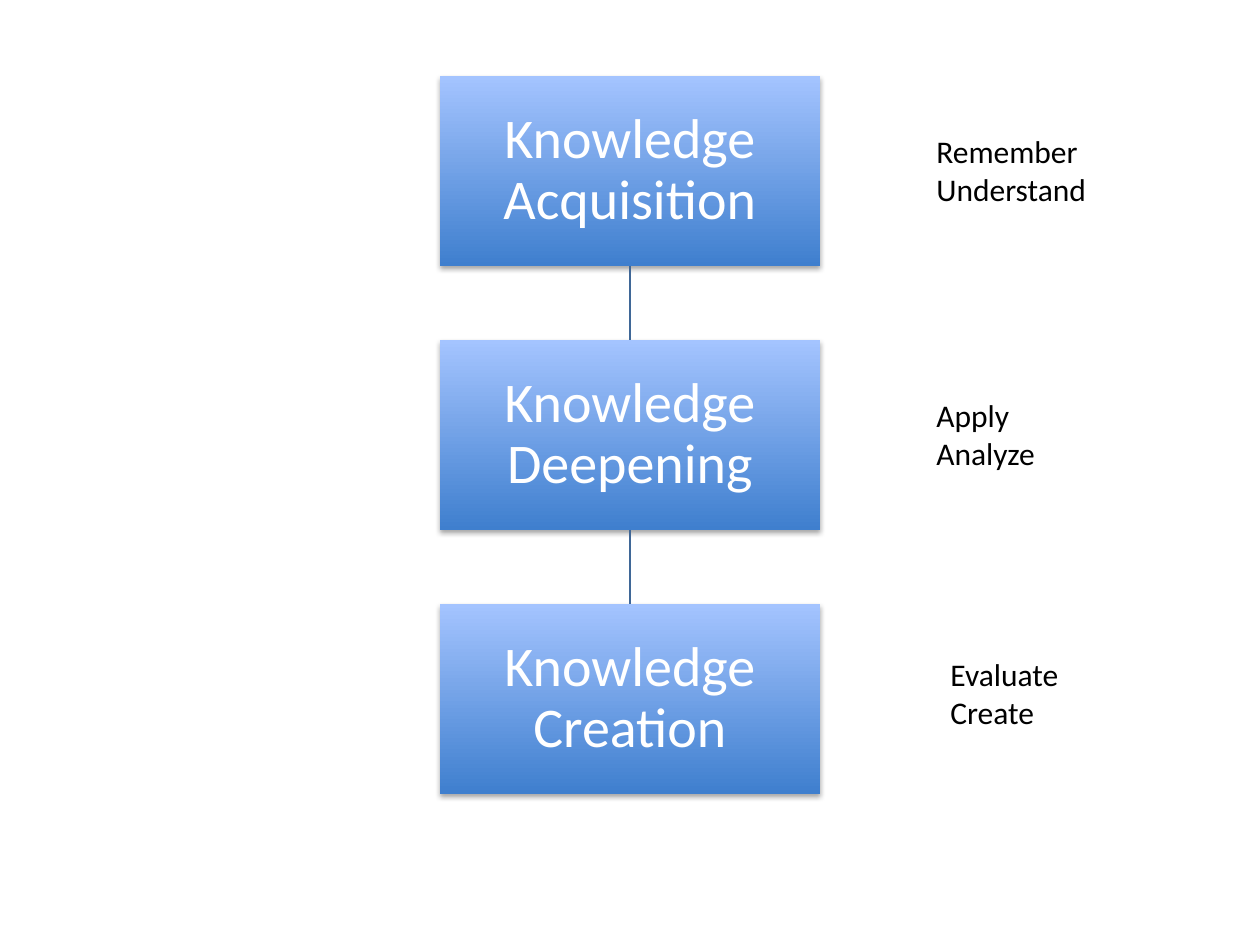
from lxml import etree
from pptx import Presentation
from pptx.dml.color import RGBColor
from pptx.enum.shapes import MSO_CONNECTOR, MSO_SHAPE
from pptx.enum.text import MSO_ANCHOR, MSO_AUTO_SIZE, PP_ALIGN
from pptx.oxml.ns import qn
from pptx.util import Emu, Pt

RECTANGLE = MSO_SHAPE.RECTANGLE
STRAIGHT = MSO_CONNECTOR.STRAIGHT
MIDDLE = MSO_ANCHOR.MIDDLE
CENTER = PP_ALIGN.CENTER
GROW = MSO_AUTO_SIZE.SHAPE_TO_FIT_TEXT

WHITE = RGBColor(0xFF, 0xFF, 0xFF)
BLACK = RGBColor(0x00, 0x00, 0x00)
DEEP_BLUE = RGBColor(0x3F, 0x7F, 0xCE)
PALE_BLUE = RGBColor(0xA4, 0xC4, 0xFF)
LINE_BLUE = RGBColor(0x3F, 0x67, 0x97)

PX_PER_INCH = 126
BOX_LEFT, BOX_TOP, BOX_WIDTH, BOX_HEIGHT = 440, 76, 380, 190
BOX_PITCH = 264
VERB_HEIGHT = 90

STAGES = [
    ("Knowledge Acquisition", ["Remember", "Understand"], (924, 126, 176)),
    ("Knowledge Deepening", ["Apply", "Analyze"], (924, 390, 125)),
    ("Knowledge Creation", ["Evaluate", "Create"], (938, 649, 135)),
]


def px(length):
    return Emu(round(length * 914400 / PX_PER_INCH))


class StageSlide:
    font_name = "Calibri"

    def __init__(self, deck):
        self.page = deck.slides.add_slide(deck.slide_layouts[6])

    def add_span(self, para, text, size, color):
        span = para.add_run()
        span.text = text
        span.font.name = self.font_name
        span.font.size = Pt(size)
        span.font.color.rgb = color

    def add_shadow(self, box):
        box.shadow.inherit = False
        effects = box._element.spPr.find(qn("a:effectLst"))
        shadow = etree.SubElement(effects, qn("a:outerShdw"), blurRad="40000",
                                  dist="23000", dir="5400000", rotWithShape="0")
        color = etree.SubElement(shadow, qn("a:srgbClr"), val=str(BLACK))
        etree.SubElement(color, qn("a:alpha"), val="35000")

    def add_stage(self, text, left, top, width, height):
        box = self.page.shapes.add_shape(RECTANGLE, px(left), px(top), px(width), px(height))
        box.fill.gradient()
        box.fill.gradient_angle = 90
        for stop, color in zip(box.fill.gradient_stops, (DEEP_BLUE, PALE_BLUE)):
            stop.color.rgb = color
        box.line.fill.background()
        self.add_shadow(box)
        frame = box.text_frame
        frame.word_wrap = True
        frame.vertical_anchor = MIDDLE
        frame.margin_left = frame.margin_right = px(3)
        frame.margin_top = frame.margin_bottom = px(3)
        para = frame.paragraphs[0]
        para.alignment = CENTER
        para.line_spacing = 0.9
        self.add_span(para, text, 32, WHITE)
        return box

    def add_verbs(self, verbs, left, top, width):
        box = self.page.shapes.add_textbox(px(left), px(top), px(width), px(VERB_HEIGHT))
        frame = box.text_frame
        frame.word_wrap = False
        frame.auto_size = GROW
        for index, verb in enumerate(verbs):
            para = frame.add_paragraph() if index else frame.paragraphs[0]
            self.add_span(para, verb, 18, BLACK)

    def add_link(self, upper, lower):
        link = self.page.shapes.add_connector(STRAIGHT, 0, 0, 0, 0)
        link.begin_connect(upper, 2)
        link.end_connect(lower, 0)
        link.line.color.rgb = LINE_BLUE
        link.line.width = Pt(0.75)
        etree.SubElement(link._element.spPr, qn("a:effectLst"))


def main():
    deck = Presentation()
    deck.slide_width = px(1260)
    deck.slide_height = px(945)
    slide = StageSlide(deck)
    boxes = []
    for index, (stage, verbs, verb_place) in enumerate(STAGES):
        top = BOX_TOP + index * BOX_PITCH
        boxes.append(slide.add_stage(stage, BOX_LEFT, top, BOX_WIDTH, BOX_HEIGHT))
        slide.add_verbs(verbs, *verb_place)
    for upper, lower in zip(boxes, boxes[1:]):
        slide.add_link(upper, lower)
    deck.save("out.pptx")


if __name__ == "__main__":
    main()
